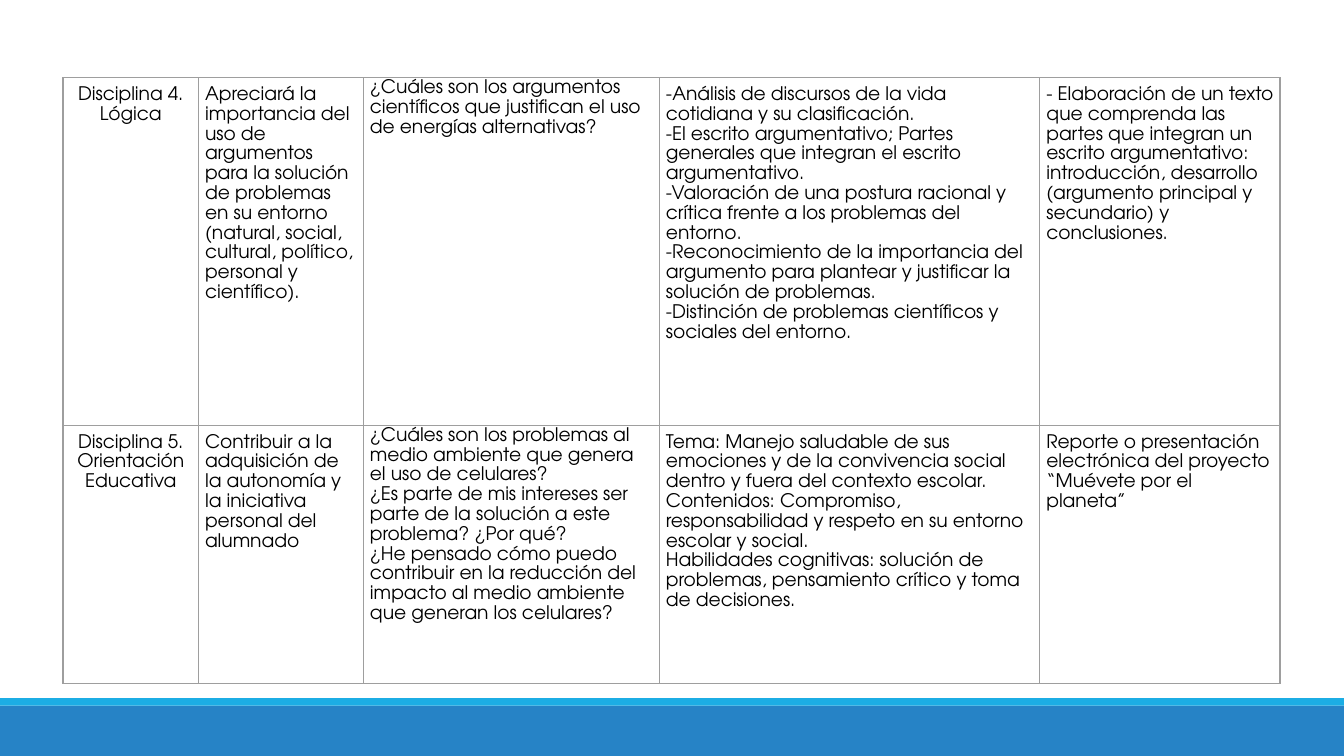
import pptx
import pptx.dml.color
import pptx.enum.shapes
import pptx.enum.text
import pptx.oxml
import pptx.oxml.ns
import pptx.util
from dataclasses import dataclass

Pt = pptx.util.Pt


@dataclass(frozen=True)
class Theme:
    font: str = "TeX Gyre Adventor"
    text_size: float = 10
    line_spacing: float = 1.15
    text: str = "000000"
    border: str = "9E9E9E"
    border_width: float = 0.75
    band: str = "2683C6"
    strip: str = "1CADE4"


THEME = Theme()
SLIDE_WIDTH, SLIDE_HEIGHT = 720, 405

# One list of cells per row; each cell is a list of paragraphs.
DISCIPLINES = [
    [
        ["Disciplina 4.", "Lógica"],
        ["Apreciará la importancia del uso de argumentos para la solución de problemas "
         "en su entorno (natural, social, cultural, político, personal y científico)."],
        ["¿Cuáles son los argumentos científicos que justifican el uso de energías alternativas?"],
        ["-Análisis de discursos de la vida cotidiana y su clasificación.",
         "-El escrito argumentativo; Partes generales que integran el escrito argumentativo.",
         "-Valoración de una postura racional y crítica frente a los problemas del entorno.",
         "-Reconocimiento de la importancia del argumento para plantear y justificar "
         "la solución de problemas.",
         "-Distinción de problemas científicos y sociales del entorno."],
        ["- Elaboración de un texto que comprenda las partes que integran un escrito "
         "argumentativo: introducción, desarrollo (argumento principal y secundario) "
         "y conclusiones."],
    ],
    [
        ["Disciplina 5.", "Orientación Educativa"],
        ["Contribuir a la adquisición de la autonomía y la iniciativa personal del alumnado"],
        ["¿Cuáles son los problemas al medio ambiente que genera el uso de celulares?",
         "¿Es parte de mis intereses ser parte de la solución a este problema? ¿Por qué?",
         "¿He pensado cómo puedo contribuir en la reducción del impacto al medio ambiente "
         "que generan los celulares?"],
        ["Tema: Manejo saludable de sus emociones y de la convivencia social dentro y fuera "
         "del contexto escolar.",
         "Contenidos: Compromiso, responsabilidad y respeto en su entorno escolar y social.",
         "Habilidades cognitivas: solución de problemas, pensamiento crítico y toma de decisiones."],
        ["Reporte o presentación electrónica del proyecto “Muévete por el planeta”"],
    ],
]

TABLE_LEFT, TABLE_TOP = 33.8, 41.6
COLUMN_WIDTHS = [72.5, 88.3, 158.6, 203.8, 128.8]
ROW_HEIGHTS = [186.2, 138.2]
CELL_INSET = 3.6
NAME_COLUMN, QUESTION_COLUMN = 0, 2

# Footer bars: top, height, colour
FOOTER_BARS = [
    (378, 27, THEME.band),
    (374, 4, THEME.strip),
]


def rgb(value):
    return pptx.dml.color.RGBColor.from_string(value)


def add_bar(slide, top, height, colour):
    bar = slide.shapes.add_shape(
        pptx.enum.shapes.MSO_SHAPE.RECTANGLE, 0, Pt(top), Pt(SLIDE_WIDTH), Pt(height))
    bar.shadow.inherit = False
    bar.fill.solid()
    bar.fill.fore_color.rgb = rgb(colour)
    bar.line.fill.background()


def set_borders(cell):
    """Outline all four sides; border elements must precede the cell fill."""
    properties = cell._tc.get_or_add_tcPr()
    for position, side in enumerate(("lnL", "lnR", "lnT", "lnB")):
        properties.insert(position, pptx.oxml.parse_xml(
            f'<a:{side} {pptx.oxml.ns.nsdecls("a")} w="{Pt(THEME.border_width)}">'
            f'<a:solidFill><a:srgbClr val="{THEME.border}"/></a:solidFill></a:{side}>'))


def fill_cell(cell, paragraphs, column):
    cell.fill.background()
    set_borders(cell)
    cell.margin_left = cell.margin_right = Pt(CELL_INSET)
    cell.margin_top = cell.margin_bottom = Pt(0 if column == QUESTION_COLUMN else CELL_INSET)
    alignment = pptx.enum.text.PP_ALIGN
    cell.text_frame.text = "\n".join(paragraphs)
    for paragraph in cell.text_frame.paragraphs:
        paragraph.alignment = alignment.CENTER if column == NAME_COLUMN else alignment.LEFT
        paragraph.line_spacing = THEME.line_spacing
        paragraph.font.name = THEME.font
        paragraph.font.size = Pt(THEME.text_size)
        paragraph.font.color.rgb = rgb(THEME.text)


def add_discipline_table(slide):
    table = slide.shapes.add_table(
        len(ROW_HEIGHTS), len(COLUMN_WIDTHS), Pt(TABLE_LEFT), Pt(TABLE_TOP),
        Pt(sum(COLUMN_WIDTHS)), Pt(sum(ROW_HEIGHTS))).table
    table.first_row = table.horz_banding = False
    for column, width in zip(table.columns, COLUMN_WIDTHS):
        column.width = Pt(width)
    for row, height, contents in zip(table.rows, ROW_HEIGHTS, DISCIPLINES):
        row.height = Pt(height)
        for column, (cell, paragraphs) in enumerate(zip(row.cells, contents)):
            fill_cell(cell, paragraphs, column)


def main():
    presentation = pptx.Presentation()
    presentation.slide_width = Pt(SLIDE_WIDTH)
    presentation.slide_height = Pt(SLIDE_HEIGHT)
    slide = presentation.slides.add_slide(presentation.slide_layouts[6])
    for top, height, colour in FOOTER_BARS:
        add_bar(slide, top, height, colour)
    add_discipline_table(slide)
    presentation.save("out.pptx")


if __name__ == "__main__":
    main()
